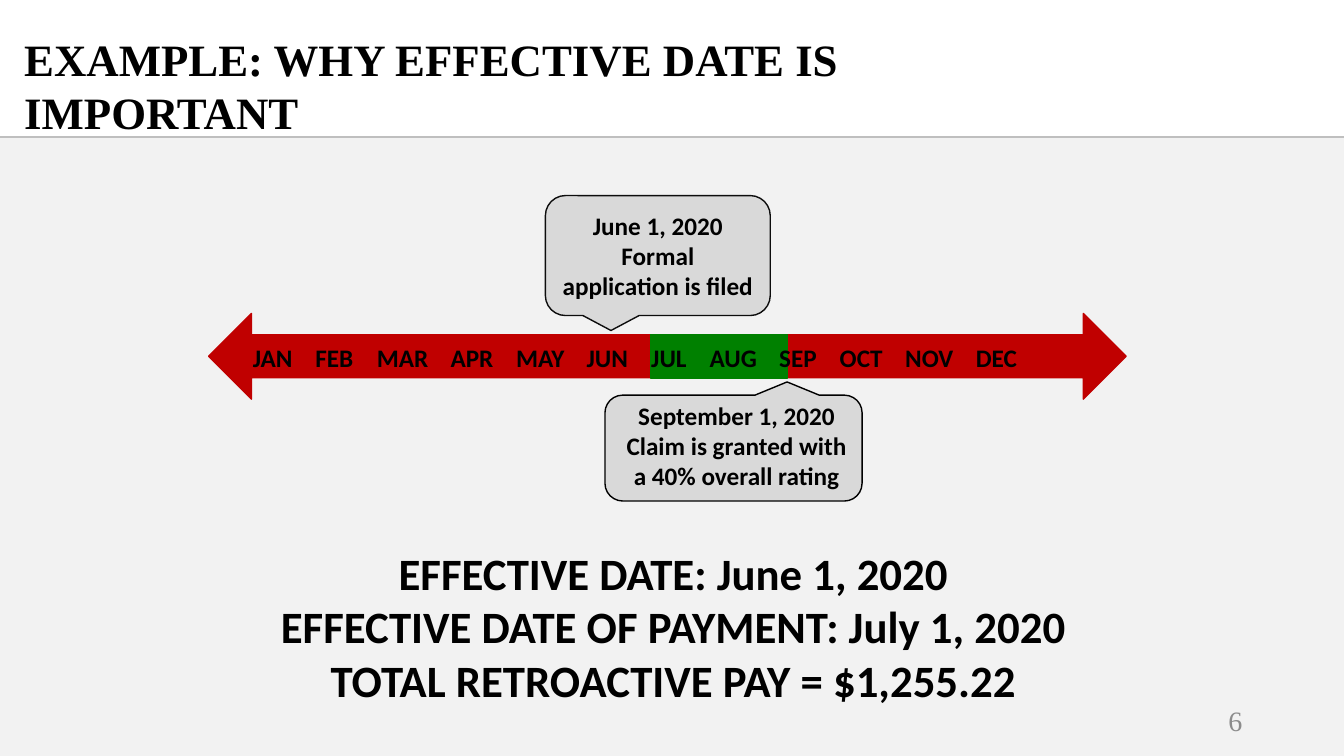
from lxml import etree
from pptx import Presentation
from pptx.dml.color import RGBColor
from pptx.enum import shapes, text
from pptx.oxml import ns
from pptx.util import Inches, Pt

BLACK = RGBColor(0x00, 0x00, 0x00)
BAND = RGBColor(0xF2, 0xF2, 0xF2)
RULE = RGBColor(0xBF, 0xBF, 0xBF)
RED = RGBColor(0xC0, 0x00, 0x00)
GREEN = RGBColor(0x00, 0x80, 0x00)
CALLOUT = RGBColor(0xD9, 0xD9, 0xD9)
CALLOUT_EDGE = RGBColor(0x0D, 0x0D, 0x0D)
NUMBER = RGBColor(0x8C, 0x8C, 0x8C)

SANS, SERIF = "Calibri", "Times New Roman"
LEFT, CENTER, RIGHT = text.PP_ALIGN.LEFT, text.PP_ALIGN.CENTER, text.PP_ALIGN.RIGHT
TOP, MIDDLE = text.MSO_ANCHOR.TOP, text.MSO_ANCHOR.MIDDLE

MONTH_TABS = {
    "JAN": 0, "FEB": 0.62, "MAR": 1.23, "APR": 1.96, "MAY": 2.61, "JUN": 3.31,
    "JUL": 3.95, "AUG": 4.53, "SEP": 5.22, "OCT": 5.82, "NOV": 6.47, "DEC": 7.17,
}


def inches(*lengths):
    """Convert a run of lengths to Inches."""
    return [Inches(length) for length in lengths]


def place(part, box):
    """Move a part to a box of left, top, width and height."""
    for side, length in zip(("left", "top", "width", "height"), inches(*box)):
        setattr(part, side, length)


def write(part, lines, size, face=SANS, color=BLACK, bold=True, align=CENTER, anchor=TOP,
          tabs=(), plain=False):
    """Write formatted paragraphs in a part, with tab stops or without bullets on request."""
    frame = part.text_frame
    layout = {"word_wrap": True, "vertical_anchor": anchor, "auto_size": text.MSO_AUTO_SIZE.NONE}
    for name, value in layout.items():
        setattr(frame, name, value)
    frame.text = "\n".join(lines)
    for paragraph in frame.paragraphs:
        paragraph.alignment = align
        paragraph.space_before = Pt(0)
        properties = paragraph._p.get_or_add_pPr()
        if plain:
            properties.set("marL", "0")
            properties.set("indent", "0")
            etree.SubElement(properties, ns.qn("a:buNone"))
        if tabs:
            stops = etree.SubElement(properties, ns.qn("a:tabLst"))
            for offset in tabs:
                etree.SubElement(stops, ns.qn("a:tab"), pos=str(Inches(offset)), algn="l")
        for name, value in {"size": Pt(size), "name": face, "bold": bold}.items():
            setattr(paragraph.font, name, value)
        paragraph.font.color.rgb = color


def add_block(slide, preset, box, fill, edge=None):
    """Add a flat filled shape, outlined when an edge colour is given."""
    block = slide.shapes.add_shape(preset, *inches(*box))
    block.shadow.inherit = False
    block.fill.solid()
    block.fill.fore_color.rgb = fill
    if edge is None:
        block.line.fill.background()
    else:
        block.line.color.rgb = edge
        block.line.width = Pt(1)
    return block


def add_backdrop(slide, box):
    """Add the grey content area and its top rule behind the placeholders."""
    left, top, width, height = box
    band = add_block(slide, shapes.MSO_SHAPE.RECTANGLE, box, BAND)
    rule = slide.shapes.add_connector(
        shapes.MSO_CONNECTOR.STRAIGHT, *inches(left, top - 0.01, left + width, top - 0.01))
    rule.line.color.rgb = RULE
    rule.line.width = Pt(1.5)
    etree.SubElement(rule.element.spPr, ns.qn("a:effectLst"))
    for part in (rule, band):
        slide.shapes.element.insert(2, part.element)


def add_heading(slide, box):
    """Fill the title placeholder."""
    place(slide.shapes.title, box)
    write(slide.shapes.title, ["EXAMPLE: WHY EFFECTIVE DATE IS IMPORTANT"], 32, SERIF, align=LEFT)


def add_timeline(slide, box):
    """Add the year arrow, the retroactive period and the month names."""
    left, top, width, height = box
    add_block(slide, shapes.MSO_SHAPE.LEFT_RIGHT_ARROW, box, RED, RED)
    add_block(slide, shapes.MSO_SHAPE.RECTANGLE, (left + 4.38, top + 0.21, 1.36, 0.43), GREEN, GREEN)
    months = slide.shapes.add_textbox(*inches(left + 0.34, top + 0.24, width - 0.35, 0.4))
    write(months, ["\t".join(MONTH_TABS)], 18, align=LEFT, tabs=list(MONTH_TABS.values())[1:])


def add_events(slide, box):
    """Add the filing callout above the arrow and the grant callout below it."""
    left, top, width, height = box
    preset = shapes.MSO_SHAPE.ROUNDED_RECTANGULAR_CALLOUT
    filing = add_block(slide, preset, (left, top, 2.23, 1.19), CALLOUT, CALLOUT_EDGE)
    write(filing, ["June 1, 2020", "Formal application is filed"], 18, anchor=MIDDLE)
    grant_top = top + height - 1.05
    grant = add_block(slide, preset, (left + 0.59, grant_top, 2.55, 1.05), CALLOUT, BLACK)
    grant.rotation = 180
    grant_label = slide.shapes.add_textbox(*inches(left + 0.62, grant_top, 2.55, 1.01))
    write(grant_label, ["September 1, 2020", "Claim is granted with a 40% overall rating"], 18)


def add_results(slide, box):
    """Fill the body placeholder with the resulting dates and pay."""
    results = slide.placeholders[1]
    place(results, box)
    write(results, [
        "EFFECTIVE DATE: June 1, 2020",
        "EFFECTIVE DATE OF PAYMENT: July 1, 2020",
        "TOTAL RETROACTIVE PAY = $1,255.22",
    ], 32, plain=True)


def add_page_number(slide, box):
    """Add the page number."""
    number = slide.shapes.add_textbox(*inches(*box))
    write(number, ["6"], 20, SERIF, NUMBER, bold=False, align=RIGHT, anchor=MIDDLE)


def main():
    """Build the slide and save it."""
    deck = Presentation()
    deck.slide_width, deck.slide_height = inches(13.33, 7.5)
    slide = deck.slides.add_slide(deck.slide_layouts[1])
    add_backdrop(slide, (0, 1.37, 13.33, 6.13))
    add_heading(slide, (0.14, 0.26, 9.47, 1.18))
    add_timeline(slide, (2.07, 3.11, 9.1, 0.85))
    add_events(slide, (5.41, 1.94, 3.14, 3.03))
    add_results(slide, (2.19, 5.36, 8.98, 1.72))
    add_page_number(slide, (9.42, 6.95, 3, 0.4))
    deck.save("out.pptx")


if __name__ == "__main__":
    main()
